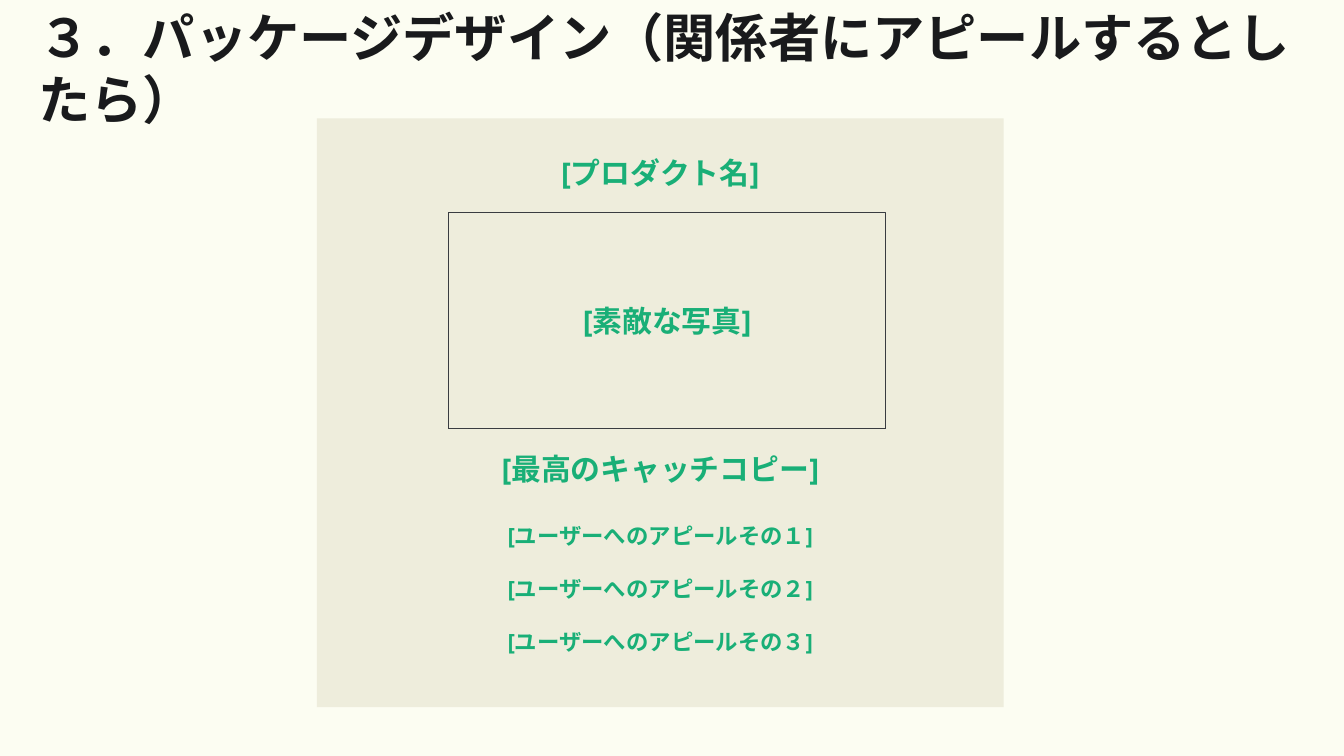
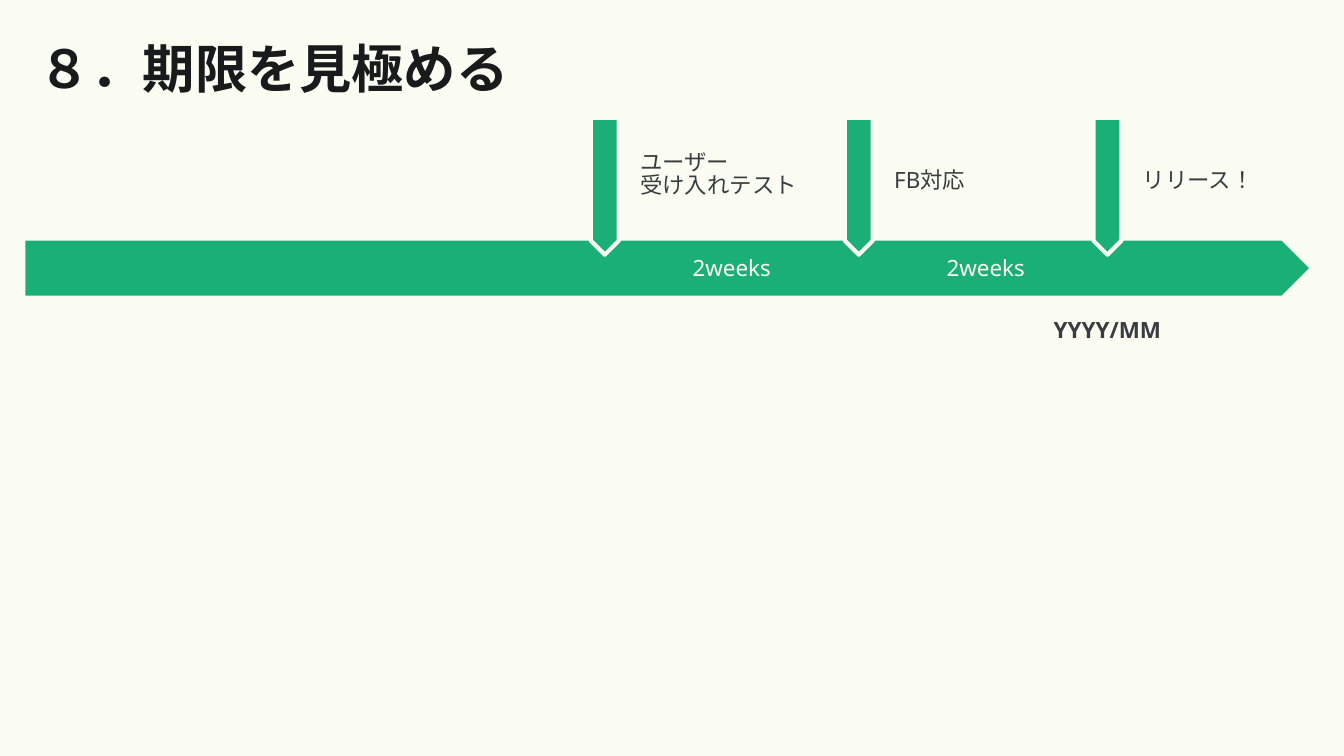
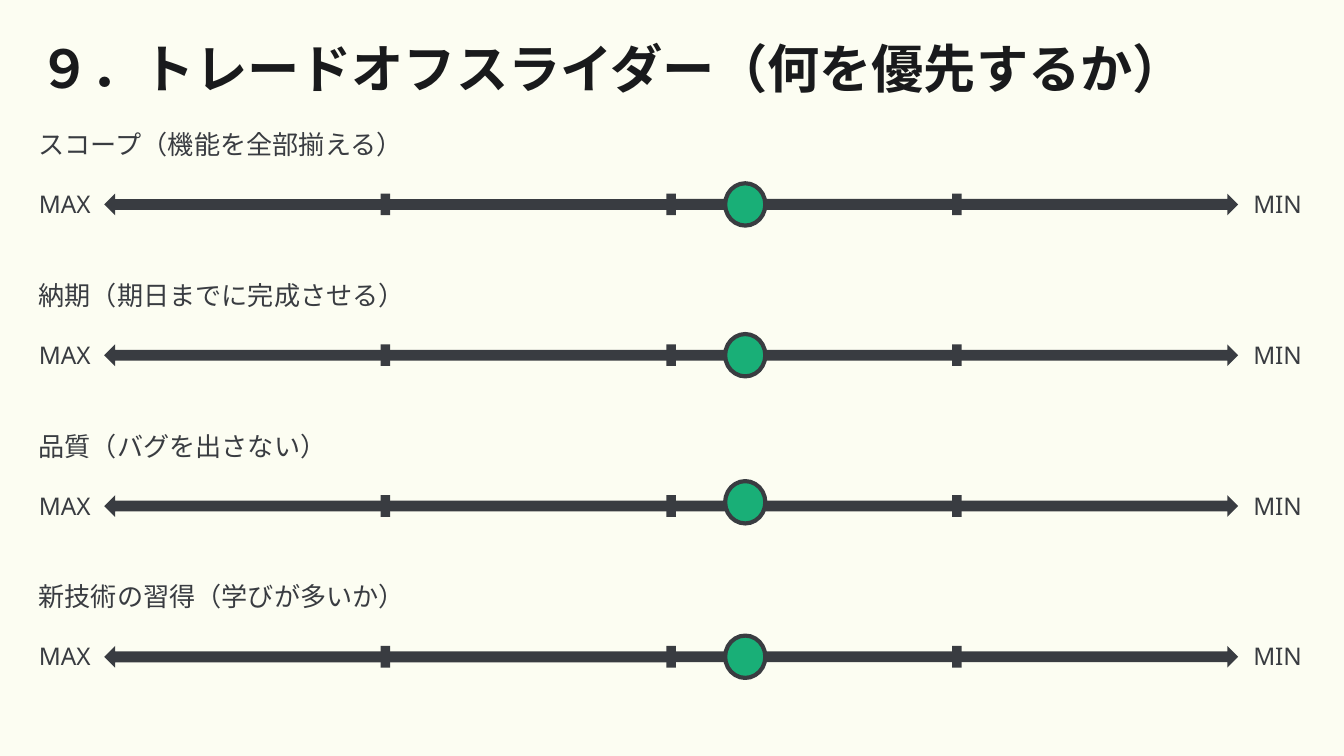
import lxml.etree
import pptx
import pptx.dml.color
import pptx.enum.lang
import pptx.enum.shapes
import pptx.enum.text
import pptx.oxml.ns
import pptx.util

Cm = pptx.util.Cm
Pt = pptx.util.Pt
SHAPE = pptx.enum.shapes.MSO_SHAPE
ALIGN = pptx.enum.text.PP_ALIGN
ANCHOR = pptx.enum.text.MSO_ANCHOR
AUTO_SIZE = pptx.enum.text.MSO_AUTO_SIZE

# Shared colours and text formats
PAPER, CARD, GREEN, SLATE, INK = "FCFDF2", "EEEDDC", "19AF77", "393C41", "191A1C"
TITLE = {"name": "Montserrat", "size": Pt(28), "bold": True, "color": INK}
HEADLINE = {"name": "Noto Sans", "size": Pt(16), "bold": True, "color": GREEN}
APPEAL = {**HEADLINE, "size": Pt(12)}
LABEL = {"name": "Noto Sans", "size": Pt(12), "bold": False, "color": SLATE}
DURATION = {**LABEL, "color": PAPER}
DATE = {**LABEL, "bold": True}
CRITERION = {**LABEL, "size": Pt(14)}
END_MARK = {**LABEL, "size": Pt(13)}


def rgb(value):
    return pptx.dml.color.RGBColor.from_string(value)


def write(shape, text, style, align=ALIGN.LEFT, anchor=ANCHOR.MIDDLE, grow=False, spacing=None):
    frame = shape.text_frame
    layout = {
        "word_wrap": True,
        "vertical_anchor": anchor,
        "auto_size": AUTO_SIZE.SHAPE_TO_FIT_TEXT if grow else AUTO_SIZE.NONE,
    }
    for side in ("left", "top", "right", "bottom"):
        layout["margin_" + side] = Cm(0.25)
    for name, value in layout.items():
        setattr(frame, name, value)
    paragraph = frame.paragraphs[0]
    paragraph.text = text
    paragraph.alignment = align
    paragraph.line_spacing = spacing
    for run in paragraph.runs:
        for name, value in style.items():
            if name == "color":
                run.font.color.rgb = rgb(value)
            else:
                setattr(run.font, name, value)
        run.font.language_id = pptx.enum.lang.MSO_LANGUAGE_ID.JAPANESE
        # Japanese characters use the same typeface
        east_asian = lxml.etree.SubElement(run._r.get_or_add_rPr(), pptx.oxml.ns.qn("a:ea"))
        east_asian.set("typeface", style["name"])


def add_text(shapes, box, text, style, **options):
    write(shapes.add_textbox(*map(Cm, box)), text, style, **options)


def add_note(shapes, box, text, style, **options):
    add_text(shapes, box, text, style, anchor=ANCHOR.TOP, grow=True, **options)


def add_block(shapes, kind, box, fill, line=None, line_width=0.75, rotation=0):
    block = shapes.add_shape(kind, *map(Cm, box))
    block.shadow.inherit = False
    block.rotation = rotation
    block.fill.solid()
    block.fill.fore_color.rgb = rgb(fill)
    if line:
        block.line.color.rgb = rgb(line)
        block.line.width = Pt(line_width)
    else:
        block.line.fill.background()
    return block


def add_slide(deck, title):
    slide = deck.slides.add_slide(deck.slide_layouts[6])
    slide.background.fill.solid()
    slide.background.fill.fore_color.rgb = rgb(PAPER)
    add_text(slide.shapes, (0.48, 0.53, 24.26, 1.5), title, TITLE)
    return slide.shapes


def package_card(shapes, box):
    x, y, width, _ = box
    add_block(shapes, SHAPE.RECTANGLE, box, CARD)
    inner_x, inner_width = x + 0.05, width - 0.1
    photo = (x + 2.49, y + 1.78, 8.26, 4.09)
    panels = [
        ("[プロダクト名]", (inner_x, y + 0.28, inner_width, 1.5), HEADLINE, None),
        ("[素敵な写真]", photo, HEADLINE, SLATE),
        ("[最高のキャッチコピー]", (inner_x, y + 5.87, inner_width, 1.5), HEADLINE, None),
    ]
    for i, number in enumerate("１２３"):
        appeal_box = (inner_x, y + 7.37 + i * 1.01, inner_width, 1.01)
        panels.append((f"[ユーザーへのアピールその{number}]", appeal_box, APPEAL, None))
    for text, panel_box, style, line in panels:
        panel = add_block(shapes, SHAPE.RECTANGLE, panel_box, CARD, line)
        write(panel, text, style, align=ALIGN.CENTER)


def timeline(shapes, box):
    x, y, _, height = box
    add_block(shapes, SHAPE.PENTAGON, box, GREEN)
    # Milestone: centre, label, label width, label height, line spacing, following duration
    milestones = [
        (x + 10.95, "ユーザー\n受け入れテスト", 3.96, 1.55, 0.85, "2weeks"),
        (x + 15.75, "FB対応", 3.96, 1.02, None, "2weeks"),
        (x + 20.45, "リリース！", 2.74, 1.02, None, None),
    ]
    length, thickness = 2.59, 0.53
    for centre, label, label_width, label_height, spacing, duration in milestones:
        marker = (centre - length / 2, y - 1.03 - thickness / 2, length, thickness)
        add_block(shapes, SHAPE.PENTAGON, marker, GREEN, PAPER, 2.25, rotation=90)
        label_x = centre + 0.42
        label_box = (label_x, y - 1.14 - label_height / 2, label_width, label_height)
        add_note(shapes, label_box, label, LABEL, spacing=spacing)
        if duration:
            add_note(shapes, (label_x, y, 3.96, height), duration, DURATION, align=ALIGN.CENTER)
    # Release date under the last milestone
    add_text(shapes, (centre - 1.37, y + 1.17, 2.74, 1.02), "YYYY/MM", DATE, align=ALIGN.CENTER)


def tradeoff_slider(shapes, box, criterion, knob_shift):
    x, y, width, _ = box
    end_width, thickness, tick = 1.49, 0.41, 0.18
    half = (width - 2 * end_width) / 2
    middle, track_y = x + width / 2, y + 1.48
    add_note(shapes, (x, y, 10.06, 1.12), criterion, CRITERION)

    # Scale with two arrows, end marks and quarter ticks
    scale = shapes.add_group_shape().shapes
    for left, rotation in ((middle, 0), (middle - half, 180)):
        arrow = (left, track_y, half, thickness)
        add_block(scale, SHAPE.RIGHT_ARROW, arrow, SLATE, rotation=rotation)
    for left, mark in ((x, "MAX"), (x + width - end_width, "MIN")):
        add_note(scale, (left, y + 1.15, end_width, 1.07), mark, END_MARK, align=ALIGN.CENTER)
    for step in (-1, 0, 1):
        tick_x = middle + step * 5.4 - tick / 2
        add_block(scale, SHAPE.RECTANGLE, (tick_x, track_y, tick, thickness), SLATE)

    # Knob
    knob = (middle + 1.02, track_y + thickness / 2 - 0.4 + knob_shift, 0.76, 0.8)
    add_block(shapes, SHAPE.OVAL, knob, GREEN, SLATE, 2.25)


def main():
    deck = pptx.Presentation()
    deck.slide_width, deck.slide_height = Cm(25.4), Cm(14.29)

    package = add_slide(deck, "３．パッケージデザイン（関係者にアピールするとしたら）")
    package_card(package, (5.99, 2.24, 12.98, 11.13))

    schedule = add_slide(deck, "８．期限を見極める")
    timeline(schedule, (0.48, 4.55, 24.26, 1.04))

    priorities = add_slide(deck, "９．トレードオフスライダー（何を優先するか）")
    criteria = [
        ("スコープ（機能を全部揃える）", 0),
        ("納期（期日までに完成させる）", 0),
        ("品質（バグを出さない）", -0.07),
        ("新技術の習得（学びが多いか）", 0),
    ]
    row_height = 2.85
    for i, (criterion, knob_shift) in enumerate(criteria):
        row = (0.48, 2.18 + i * row_height, 24.41, row_height)
        tradeoff_slider(priorities, row, criterion, knob_shift)

    deck.save("out.pptx")


if __name__ == "__main__":
    main()
